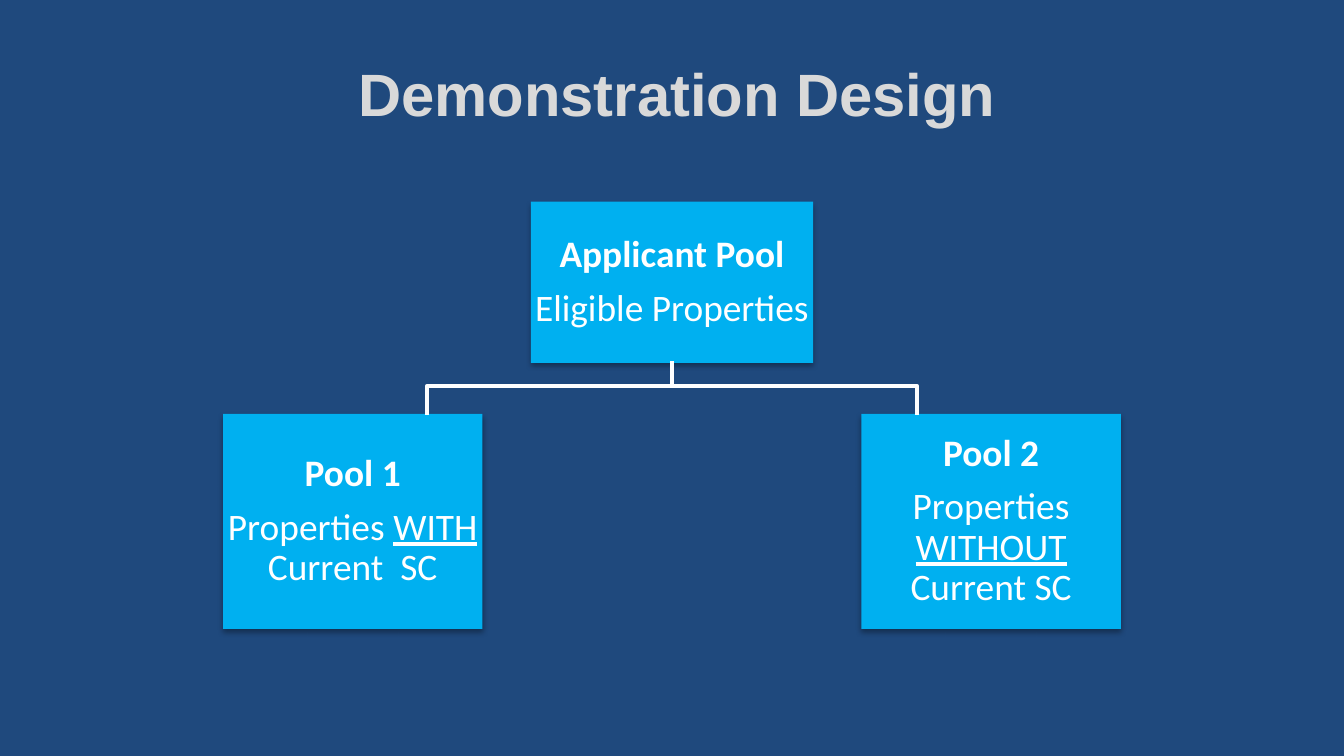
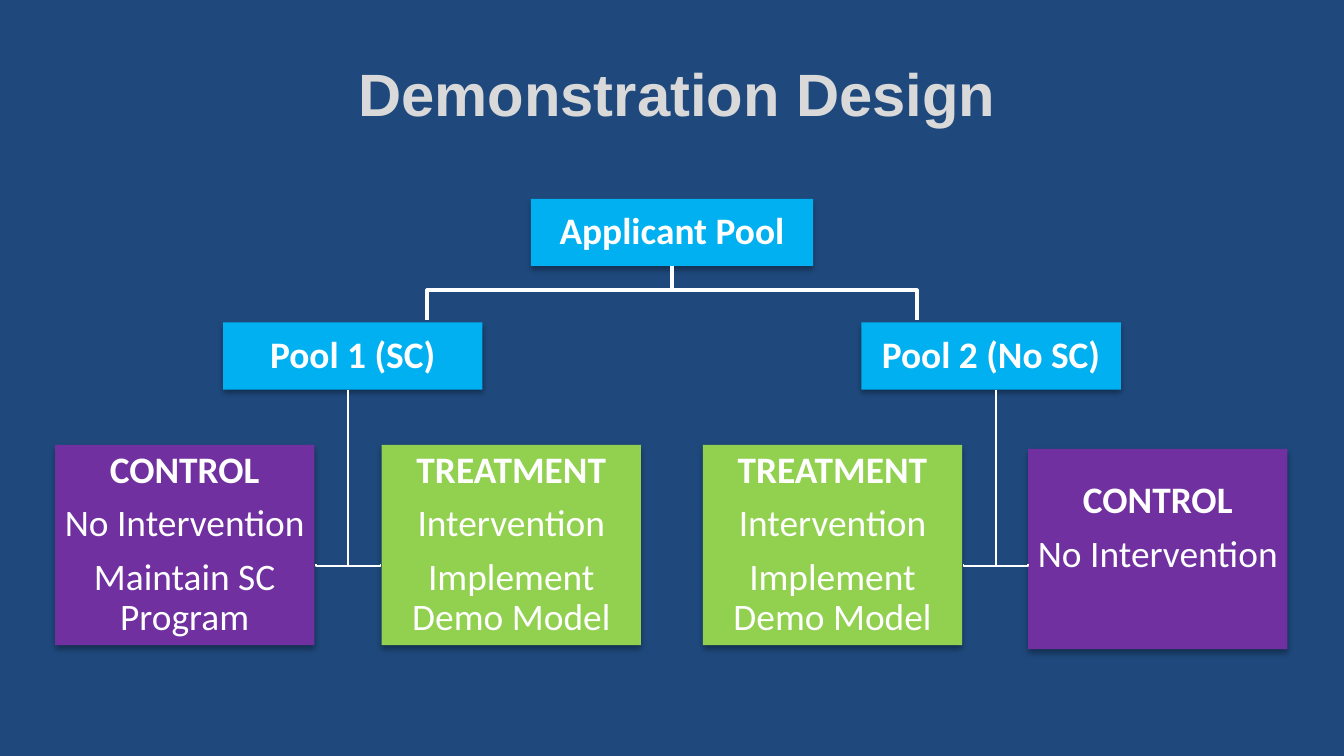
import lxml.etree
import pptx
import pptx.dml.color
import pptx.enum.shapes
import pptx.enum.text
import pptx.oxml
import pptx.oxml.ns
import pptx.util
from pptx.util import Inches

NAVY = "1F497D"
SKY = "00B0F0"
GREEN = "92D050"
PURPLE = "7030A0"
WHITE = "FFFFFF"
TITLE_GRAY = "D9D9D9"

CENTER_X = 5
POOL_WIDTH = 1.93
POOL_LEFTS = (1.66, 6.41)
GROUP_HEIGHT = 1.49
BRACKET_REACH = 1.82

SHADOW = (
    '<a:effectLst xmlns:a="http://schemas.openxmlformats.org/drawingml/2006/main">'
    '<a:outerShdw blurRad="39370" dist="22860" dir="5400000" rotWithShape="0">'
    '<a:srgbClr val="000000"><a:alpha val="35000"/></a:srgbClr>'
    "</a:outerShdw></a:effectLst>"
)


def color(hex_value):
    return pptx.dml.color.RGBColor.from_string(hex_value)


def write_text(shape, paragraphs, font="Calibri", size=20, hue=WHITE,
               line_spacing=None, space_after=None, underline_mark="_"):
    frame = shape.text_frame
    frame.word_wrap = True
    frame.vertical_anchor = pptx.enum.text.MSO_ANCHOR.MIDDLE
    for index, text in enumerate(paragraphs):
        paragraph = frame.paragraphs[0] if index == 0 else frame.add_paragraph()
        paragraph.alignment = pptx.enum.text.PP_ALIGN.CENTER
        if line_spacing:
            paragraph.line_spacing = line_spacing
        if space_after is not None:
            paragraph.space_after = pptx.util.Pt(space_after)
        for part, words in enumerate(text.split(underline_mark)):
            run = paragraph.add_run()
            run.text = words
            run.font.name = font
            run.font.size = pptx.util.Pt(size)
            run.font.bold = index == 0
            run.font.underline = part % 2 == 1
            run.font.color.rgb = color(hue)


def add_design_slide(deck):
    slide = deck.slides.add_slide(deck.slide_layouts[5])
    title = slide.shapes.title
    title.left, title.top = Inches(1.04), Inches(0.31)
    title.width, title.height = Inches(8), Inches(0.76)
    write_text(title, ["Demonstration Design"], font="Arial", size=32, hue=TITLE_GRAY)
    return slide


def add_box(slide, left, top, width, height, fill, paragraphs, bottom_inset=0.01):
    box = slide.shapes.add_shape(
        pptx.enum.shapes.MSO_SHAPE.RECTANGLE,
        Inches(left), Inches(top), Inches(width), Inches(height))
    box.fill.solid()
    box.fill.fore_color.rgb = color(fill)
    box.line.fill.background()
    box._element.spPr.append(pptx.oxml.parse_xml(SHADOW))
    frame = box.text_frame
    frame.margin_left = frame.margin_right = frame.margin_top = Inches(0.01)
    frame.margin_bottom = Inches(bottom_inset)
    write_text(box, paragraphs, line_spacing=0.9, space_after=7)


def add_applicant_pool(slide, top, height, paragraphs):
    add_box(slide, 3.95, top, 2.1, height, SKY, paragraphs)


def add_pools(slide, top, height, pools):
    for left, paragraphs in zip(POOL_LEFTS, pools):
        add_box(slide, left, top, POOL_WIDTH, height, SKY, paragraphs)


def add_bracket(slide, top):
    bend, bottom = top + 0.18, top + 0.4
    for reach in (-BRACKET_REACH, BRACKET_REACH):
        end_x = CENTER_X + reach
        outline = slide.shapes.build_freeform(Inches(CENTER_X), Inches(top))
        outline.add_line_segments(
            [(Inches(x), Inches(y))
             for x, y in ((CENTER_X, bend), (end_x, bend), (end_x, bottom))],
            close=False)
        branch = outline.convert_to_shape()
        branch.shadow.inherit = False
        branch.fill.background()
        branch.line.color.rgb = color(WHITE)
        branch.line.width = pptx.util.Pt(2.25)


def add_elbow(slide, trunk_x, side_x, top=2.9, drop=1.3):
    span = abs(side_x - trunk_x)
    left = (trunk_x + side_x - drop) / 2
    middle_y = top + drop / 2
    start_x, end_x, turn = left, left + drop, 90
    if side_x > trunk_x:
        start_x, end_x, turn = end_x, start_x, 270
    elbow = slide.shapes.add_connector(
        pptx.enum.shapes.MSO_CONNECTOR.ELBOW,
        Inches(start_x), Inches(middle_y - span / 2),
        Inches(end_x), Inches(middle_y + span / 2))
    elbow.line.color.rgb = color(WHITE)
    elbow.line.width = pptx.util.Pt(0.75)
    properties = elbow._element.spPr
    properties.find(pptx.oxml.ns.qn("a:xfrm")).set("rot", str(turn * 60000))
    geometry = properties.find(pptx.oxml.ns.qn("a:prstGeom"))
    adjustments = geometry.find(pptx.oxml.ns.qn("a:avLst"))
    if adjustments is None:
        adjustments = lxml.etree.SubElement(geometry, pptx.oxml.ns.qn("a:avLst"))
    lxml.etree.SubElement(adjustments, pptx.oxml.ns.qn("a:gd"),
                          name="adj1", fmla="val 100900")
    lxml.etree.SubElement(properties, pptx.oxml.ns.qn("a:effectLst"))


def build_pool_slide(deck):
    slide = add_design_slide(deck)
    add_applicant_pool(slide, 1.5, 1.2, ["Applicant Pool", "Eligible Properties"])
    add_pools(slide, 3.08, 1.6, [
        ["Pool 1", "Properties _WITH_ Current  SC"],
        ["Pool 2", "Properties _WITHOUT_ Current SC"],
    ])
    add_bracket(slide, 2.69)


def build_group_slide(deck):
    slide = add_design_slide(deck)
    add_applicant_pool(slide, 1.48, 0.5, ["Applicant Pool"])
    add_pools(slide, 2.4, 0.5, [["Pool 1 (SC)"], ["Pool 2 (No SC)"]])
    treatment = ["TREATMENT", "Intervention", "Implement Demo Model"]
    control = ["CONTROL", "No Intervention"]
    groups = [
        (0.41, 3.31, PURPLE, control + ["Maintain SC Program"], 0.01),
        (2.84, 3.31, GREEN, treatment, 0.01),
        (5.23, 3.31, GREEN, treatment, 0.01),
        (7.65, 3.34, PURPLE, control, 0.32),
    ]
    for left, top, fill, paragraphs, bottom_inset in groups:
        add_box(slide, left, top, POOL_WIDTH, GROUP_HEIGHT, fill, paragraphs, bottom_inset)
    add_bracket(slide, 1.98)
    for trunk_x in (2.59, 7.41):
        for side_x in (trunk_x - 0.24, trunk_x + 0.24):
            add_elbow(slide, trunk_x, side_x)


def main():
    deck = pptx.Presentation()
    deck.slide_width = Inches(10)
    deck.slide_height = deck.slide_width * 9 // 16
    background = deck.slide_master.background.fill
    background.solid()
    background.fore_color.rgb = color(NAVY)
    build_pool_slide(deck)
    build_group_slide(deck)
    deck.save("out.pptx")


if __name__ == "__main__":
    main()
